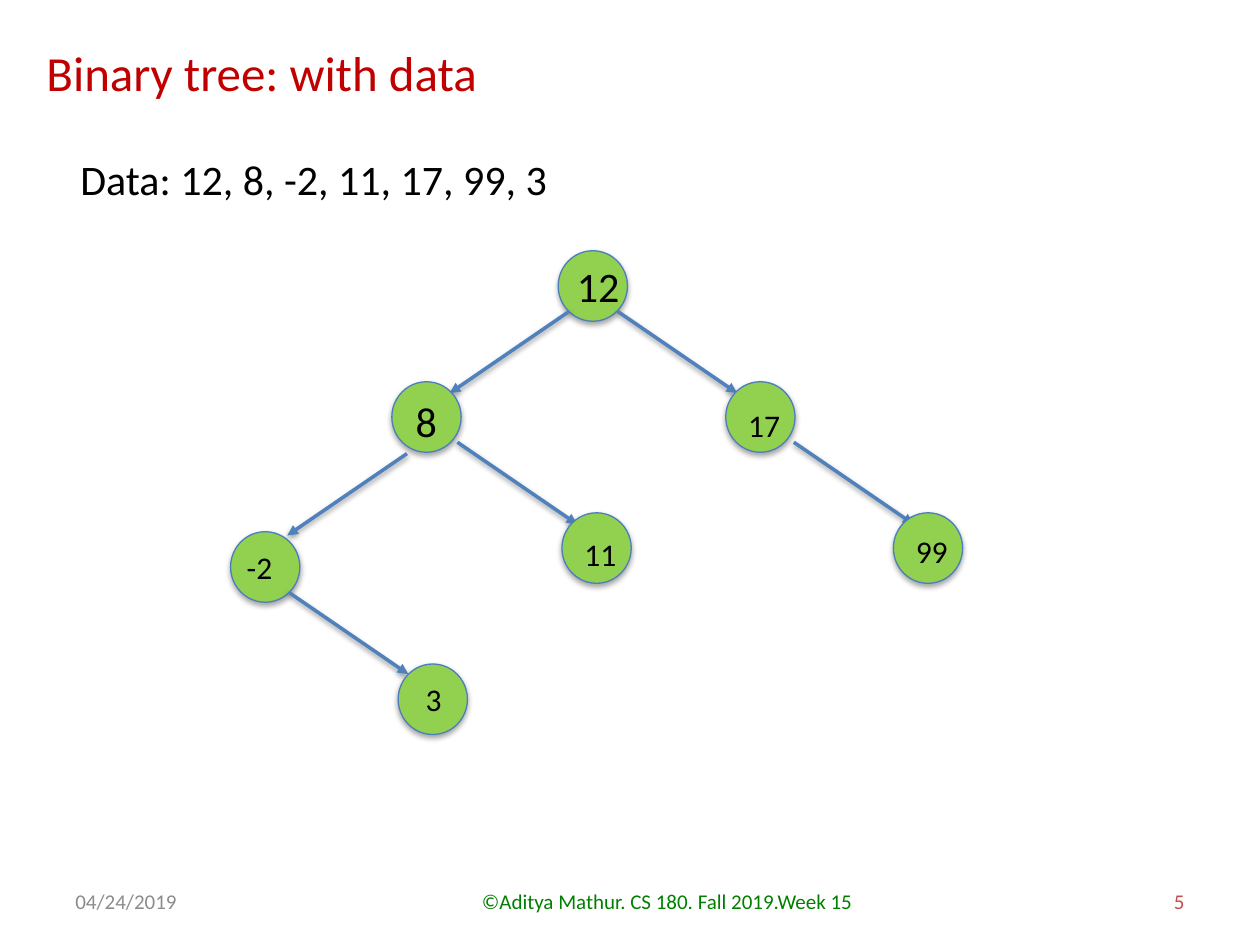
from collections import namedtuple
from dataclasses import dataclass

from lxml import etree
from pptx import Presentation
from pptx import util as u
from pptx.dml.color import RGBColor
from pptx.enum import shapes, text
from pptx.oxml.ns import qn

COLS, ROWS = 10, 7.5  # the slide grid, in cells of one inch

Box = namedtuple("Box", "x y w h")
Node = namedtuple("Node", "label x y dx dy w size edge", defaults=(None,))
Edge = namedtuple("Edge", "side x y")  # side: -1 left child, 1 right child


@dataclass(frozen=True)
class Theme:
    font: str = "Calibri"
    title: str = "C00000"
    body: str = "000000"
    date: str = "8C8C8C"
    credit: str = "008000"
    number: str = "C0504D"
    node: str = "92D050"
    outline: str = "4B7EBC"
    edge: str = "4F81BD"
    title_size: int = 28
    large: int = 24
    medium: int = 18
    small: int = 12


T = Theme()

NODE_W, NODE_H = 0.55, 0.56
EDGE_W, EDGE_H = 0.95, 0.65

# Node places are relative to the tree; label and edge tip to the node.
NODES = [
    Node("12", 2.6, 0, 0.05, 0.03, 0.54, T.large),
    Node("8", 1.28, 1.04, 0.09, 0.06, 0.37, T.large, Edge(-1, 0.46, 0.09)),
    Node("-2", 0, 2.23, 0.03, 0.08, 0.41, T.medium, Edge(-1, 0.45, 0.03)),
    Node("11", 2.63, 2.08, 0.08, 0.13, 0.46, T.medium, Edge(1, 0.12, 0.09)),
    Node("17", 3.93, 1.04, 0.08, 0.14, 0.46, T.medium, Edge(1, 0.09, 0.09)),
    Node("99", 5.26, 2.08, 0.08, 0.1, 0.46, T.medium, Edge(1, 0.16, 0.09)),
    Node("3", 1.33, 3.28, 0.12, 0.08, 0.33, T.medium, Edge(1, 0.08, 0.08)),
]


def inches(*values):
    return [u.Inches(v) for v in values]


def add_text(parent, box, words, size, color, align=text.PP_ALIGN.LEFT,
             anchor=text.MSO_ANCHOR.TOP, wrap=True):
    tf = parent.add_textbox(*inches(*box)).text_frame
    tf.text = words
    tf.word_wrap = wrap
    tf.vertical_anchor = anchor
    p = tf.paragraphs[0]
    p.alignment = align
    font = p.runs[0].font
    font.name, font.size = T.font, u.Pt(size)
    font.color.rgb = RGBColor.from_string(color)


def set_line(line, color, width):
    line.color.rgb = RGBColor.from_string(color)
    line.width = u.Pt(width)


def add_shadow(sp, distance, opacity):
    """Cast a soft black shadow straight down; call after the line is set."""
    effects = etree.SubElement(sp._element.spPr, qn("a:effectLst"))
    shadow = etree.SubElement(effects, qn("a:outerShdw"), blurRad="40000",
                              dist=str(u.Pt(distance)), dir="5400000",
                              rotWithShape="0")
    black = etree.SubElement(shadow, qn("a:srgbClr"), val="000000")
    etree.SubElement(black, qn("a:alpha"), val=str(opacity * 1000))


def add_edge(parent, x, y, side):
    """Draw an arrow that ends at x, y, coming from the parent above."""
    line = parent.add_connector(
        shapes.MSO_CONNECTOR.STRAIGHT,
        *inches(x - side * EDGE_W, y - EDGE_H, x, y))
    set_line(line.line, T.edge, 2)
    etree.SubElement(line.line._get_or_add_ln(), qn("a:tailEnd"),
                     type="triangle")
    add_shadow(line, 1.6, 38)


def add_node(s, tree, node):
    x, y = tree.x + node.x, tree.y + node.y
    group = s.shapes.add_group_shape().shapes
    if node.edge:
        add_edge(group, x + node.edge.x, y + node.edge.y, node.edge.side)
    sp = group.add_shape(shapes.MSO_SHAPE.OVAL,
                         *inches(x, y, NODE_W, NODE_H))
    sp.fill.solid()
    sp.fill.fore_color.rgb = RGBColor.from_string(T.node)
    set_line(sp.line, T.outline, 0.75)
    add_shadow(sp, 1.8, 35)
    height = 0.5 if node.size == T.large else 0.4
    add_text(group, Box(x + node.dx, y + node.dy, node.w, height),
             node.label, node.size, T.body, wrap=False)


def add_tree(s, box):
    for node in NODES:
        add_node(s, box, node)


def add_heading(s, box):
    add_text(s.shapes, Box(box.x, box.y, box.w, 0.57),
             "Binary tree: with data", T.title_size, T.title)
    add_text(s.shapes, Box(box.x + 0.27, box.y + 0.88, 3.93, 0.5),
             "Data: 12, 8, -2, 11, 17, 99, 3", T.large, T.body, wrap=False)


def add_footer(s, box):
    side = 2.33
    middle = box.w - 2 * side
    align = text.PP_ALIGN
    x = box.x
    for words, w, color, al in (
        ("04/24/2019", side, T.date, align.LEFT),
        ("©Aditya Mathur. CS 180. Fall 2019.Week 15", middle, T.credit,
         align.CENTER),
        ("5", side, T.number, align.RIGHT),
    ):
        # The credit sits a little right of the middle column.
        left, width = (3.42, 3.75) if al == align.CENTER else (x, w)
        add_text(s.shapes, Box(left, box.y, width, box.h), words, T.small,
                 color, al, text.MSO_ANCHOR.MIDDLE)
        x += w


def main():
    prs = Presentation()
    prs.slide_width, prs.slide_height = inches(COLS, ROWS)
    s = prs.slides.add_slide(prs.slide_layouts[6])
    add_footer(s, Box(0.5, 6.95, COLS - 1, 0.4))
    add_heading(s, Box(0.27, 0.29, 5.02, 1.38))
    add_tree(s, Box(1.83, 1.99, 5.81, 3.84))
    prs.save("out.pptx")


if __name__ == "__main__":
    main()
